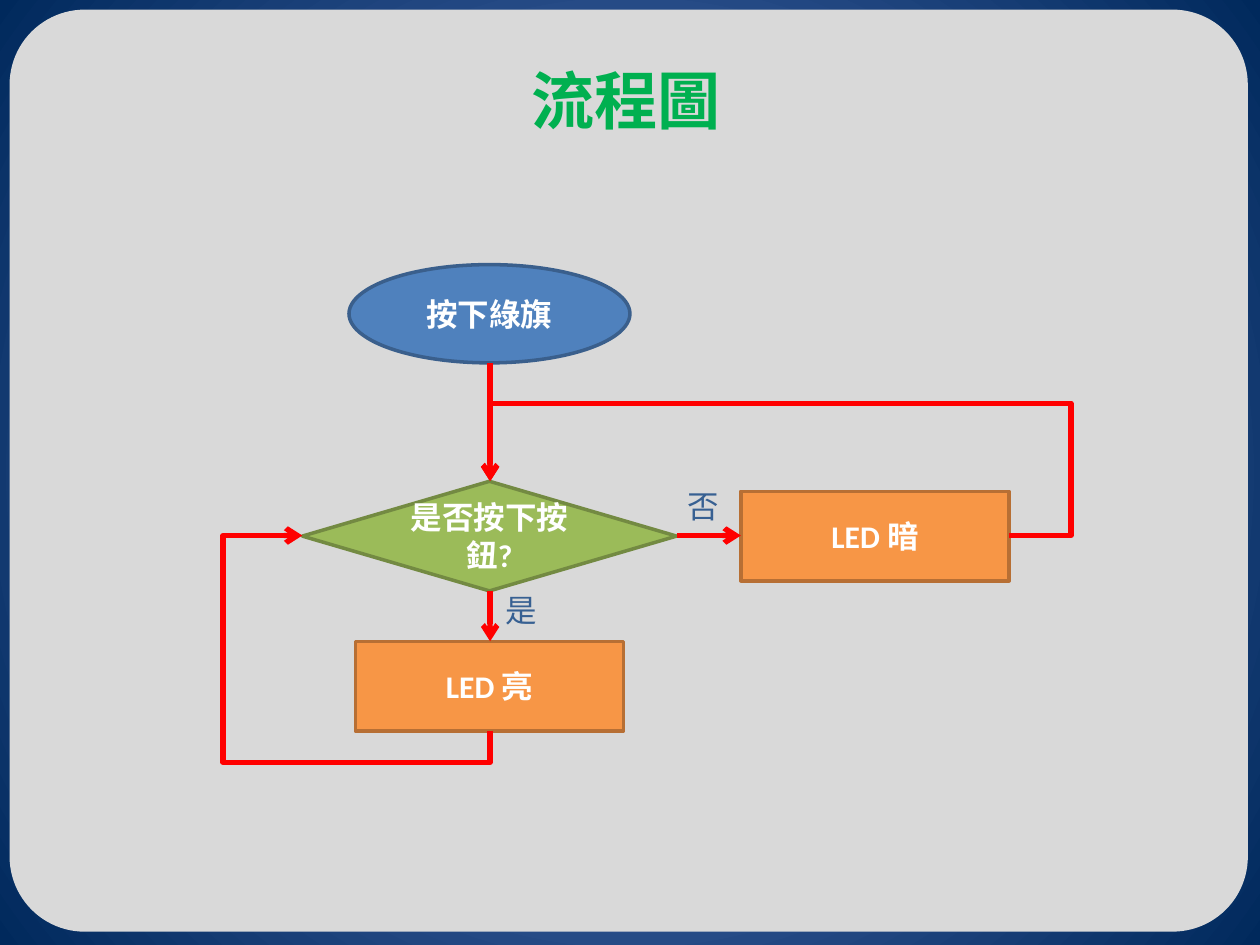
import pptx
import pptx.dml.color
import pptx.enum.shapes
import pptx.enum.text
import pptx.oxml.ns
import pptx.oxml.xmlchemy
import pptx.util
from pptx.util import Inches

COLORS = {
    "glow": "5E7CC5", "navy": "00295C", "panel": "D9D9D9", "title": "00B050",
    "start": "4F81BD", "start_edge": "3A5F8C",
    "decision": "9BBB59", "decision_edge": "738A42",
    "action": "F79646", "action_edge": "B76F34",
    "arrow": "FF0000", "answer": "376092", "white": "FFFFFF",
}
SHAPES = pptx.enum.shapes.MSO_SHAPE
ALIGN = pptx.enum.text.PP_ALIGN
qn = pptx.oxml.ns.qn


def rgb(name):
    return pptx.dml.color.RGBColor.from_string(COLORS[name])


def add_child(parent, tag, **attributes):
    child = pptx.oxml.xmlchemy.OxmlElement(tag)
    for key, value in attributes.items():
        child.set(key, str(value))
    parent.append(child)
    return child


def write_text(frame, text, size=18, color="white", bold=False, align=ALIGN.LEFT,
               latin="Calibri", asian="Noto Sans CJK JP"):
    frame.word_wrap = True
    paragraph = frame.paragraphs[0]
    paragraph.alignment = align
    run = paragraph.add_run()
    run.text = text
    run.font.size = pptx.util.Pt(size)
    run.font.bold = bold
    run.font.color.rgb = rgb(color)
    run.font.name = latin
    add_child(run.font._element, "a:ea", typeface=asian)


class Flowchart:
    """Holds the slide and the line widths shared by its elements."""
    edge_width = pptx.util.Pt(2)
    arrow_width = pptx.util.Pt(3)

    def __init__(self, slide):
        self.slide = slide

    def background(self, inner, outer):
        """Radial gradient from the middle of the slide."""
        fill = self.slide.background.fill
        fill.gradient()
        for stop, color in zip(fill.gradient_stops, (inner, outer)):
            stop.color.rgb = rgb(color)
        gradient = next(self.slide.element.iter(qn("a:gradFill")))
        gradient.remove(gradient.find(qn("a:lin")))
        circle = add_child(gradient, "a:path", path="circle")
        add_child(circle, "a:fillToRect", l=50000, t=50000, r=50000, b=50000)

    def node(self, kind, left, top, width, height, fill, edge, text=None):
        node = self.slide.shapes.add_shape(
            kind, Inches(left), Inches(top), Inches(width), Inches(height))
        node.shadow.inherit = False
        node.fill.solid()
        node.fill.fore_color.rgb = rgb(fill)
        node.line.color.rgb = rgb(edge)
        node.line.width = self.edge_width
        if text:
            node.text_frame.vertical_anchor = pptx.enum.text.MSO_ANCHOR.MIDDLE
            write_text(node.text_frame, text, bold=True, align=ALIGN.CENTER)
        return node

    def label(self, text, left, top, width, height, **text_format):
        frame = self.slide.shapes.add_textbox(
            Inches(left), Inches(top), Inches(width), Inches(height)).text_frame
        write_text(frame, text, **text_format)
        frame.auto_size = pptx.enum.text.MSO_AUTO_SIZE.SHAPE_TO_FIT_TEXT

    def arrow(self, start, end, kind=pptx.enum.shapes.MSO_CONNECTOR.STRAIGHT):
        arrow = self.slide.shapes.add_connector(
            kind, *(Inches(value) for value in (*start, *end)))
        arrow.line.color.rgb = rgb("arrow")
        arrow.line.width = self.arrow_width
        properties = arrow._element.spPr
        add_child(properties.find(qn("a:ln")), "a:tailEnd", type="arrow")
        add_child(properties, "a:effectLst")
        return properties

    def loop(self, start, end, corner, leaves_down=False):
        """Four-part arrow whose far corner is given; one leaving downwards is turned by 90°."""
        ratios = [(c - s) / (e - s) for s, e, c in zip(start, end, corner)]
        if leaves_down:
            ratios.reverse()
            middle = [(s + e) / 2 for s, e in zip(start, end)]
            start, end = ((middle[0] + y - middle[1], middle[1] - x + middle[0])
                          for x, y in (start, end))
        properties = self.arrow(start, end, pptx.enum.shapes.MSO_CONNECTOR.ELBOW)
        if leaves_down:
            properties.find(qn("a:xfrm")).set("rot", str(90 * 60000))
        geometry = properties.find(qn("a:prstGeom"))
        geometry.set("prst", "bentConnector4")
        for old in list(geometry):
            geometry.remove(old)
        adjustments = add_child(geometry, "a:avLst")
        for number, ratio in enumerate(ratios, 1):
            add_child(adjustments, "a:gd", name=f"adj{number}",
                      fmla=f"val {round(ratio * 100000)}")


def main():
    presentation = pptx.Presentation()
    presentation.slide_width, presentation.slide_height = Inches(10), Inches(7.5)
    chart = Flowchart(presentation.slides.add_slide(presentation.slide_layouts[6]))

    chart.background("glow", "navy")
    panel = chart.node(SHAPES.ROUNDED_RECTANGLE, 0.09, 0.09, 9.8, 7.29, "panel", "panel")
    panel.adjustments[0] = 0.08
    chart.label("流程圖", 3.35, 0.44, 3.23, 0.71, size=36, color="title", bold=True,
                align=ALIGN.CENTER, latin="Noto Sans CJK JP")

    trunk, row = 3.89, 4.25
    decision_left, decision_top, decision_right, decision_bottom = 2.4, 3.82, 5.37, 4.69
    start_bottom, on_top, on_bottom = 2.88, 5.09, 5.8
    off_left, off_right = 5.88, 8.01

    chart.node(SHAPES.OVAL, 2.77, 2.1, 2.23, 0.78, "start", "start_edge", "按下綠旗")
    chart.node(SHAPES.RECTANGLE, off_left, 3.9, 2.13, 0.71, "action", "action_edge", "LED 暗")
    chart.arrow((trunk, start_bottom), (trunk, decision_top))
    chart.node(SHAPES.FLOWCHART_DECISION, decision_left, decision_top, 2.97, 0.87,
               "decision", "decision_edge", "是否按下按鈕?")
    chart.node(SHAPES.RECTANGLE, 2.82, on_top, 2.13, 0.71, "action", "action_edge", "LED 亮")
    chart.arrow((decision_right, row), (off_left, row))
    chart.arrow((trunk, decision_bottom), (trunk, on_top))
    chart.loop((trunk, on_bottom), (decision_left, row), (1.77, 6.05), leaves_down=True)
    for answer, left, top in (("是", 3.91, 4.64), ("否", 5.36, 3.82)):
        chart.label(answer, left, top, 0.51, 0.4, color="answer",
                    latin="Noto Sans CJK SC", asian="Noto Sans CJK SC")
    chart.loop((off_right, row), (trunk, decision_top), (8.5, 3.2))

    presentation.save("out.pptx")


if __name__ == "__main__":
    main()
